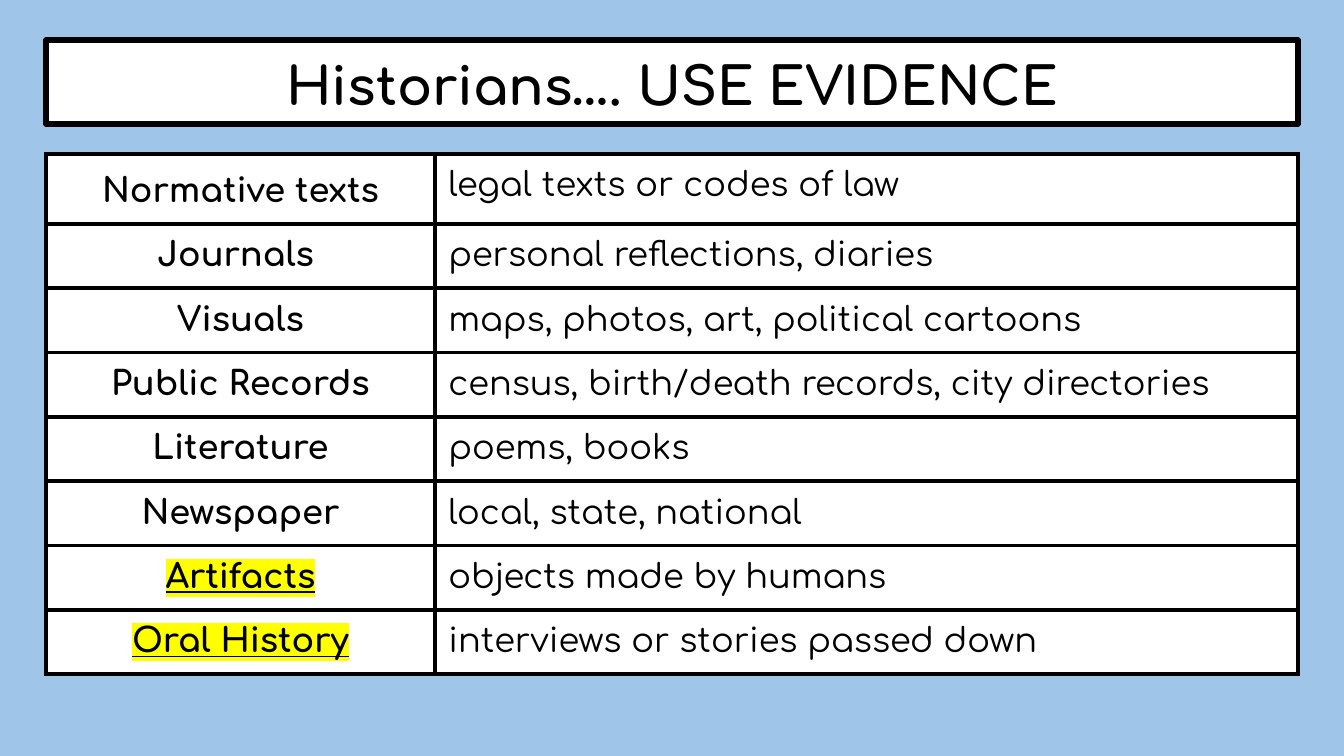
from dataclasses import dataclass

from pptx import Presentation
from pptx import util as u
from pptx.dml.color import RGBColor
from pptx.enum import text
from pptx.oxml.ns import qn
from lxml import etree


@dataclass(frozen=True)
class Theme:
    font: str = "Comfortaa"
    sky: str = "9FC5E8"
    paper: str = "FFFFFF"
    ink: str = "000000"
    marker: str = "FFFF00"
    title_size: int = 28
    body_size: int = 18
    frame_width: float = 3
    rule_width: float = 2.25


THEME = Theme()
PX = 914400 / 134.4
LEFT, WIDTH = 46, 1252
TERM_WIDTH = 389
FIRST_ROW, ROW = 69, 64
INSET = u.Inches(0.1)

EVIDENCE = [
    ("Normative texts", "legal texts or codes of law"),
    ("Journals ", "personal reflections, diaries"),
    ("Visuals", "maps, photos, art, political cartoons"),
    ("Public Records", "census, birth/death records, city directories"),
    ("Literature", "poems, books"),
    ("Newspaper", "local, state, national"),
    ("Artifacts", "objects made by humans"),
    ("Oral History", "interviews or stories passed down"),
]
HIGHLIGHTED = {"Artifacts", "Oral History"}


def px(length):
    return u.Emu(round(length * PX))


def style(paragraph, size, bold, align):
    paragraph.alignment = align
    font = paragraph.font
    font.name, font.size, font.bold = THEME.font, u.Pt(size), bold
    font.color.rgb = RGBColor.from_string(THEME.ink)


prs = Presentation()
prs.slide_width, prs.slide_height = px(1344), px(756)
slide = prs.slides.add_slide(prs.slide_layouts[5])
slide.background.fill.solid()
slide.background.fill.fore_color.rgb = RGBColor.from_string(THEME.sky)

# Title
title = slide.shapes.title
title.left, title.top, title.width, title.height = px(LEFT), px(40), px(WIDTH), px(84)
title.fill.solid()
title.fill.fore_color.rgb = RGBColor.from_string(THEME.paper)
title.line.color.rgb = RGBColor.from_string(THEME.ink)
title.line.width = u.Pt(THEME.frame_width)
heading = title.text_frame
heading.text = "Historians…. USE EVIDENCE"
heading.word_wrap = True
heading.auto_size = text.MSO_AUTO_SIZE.NONE
heading.vertical_anchor = text.MSO_ANCHOR.TOP
heading.margin_left = heading.margin_right = INSET
heading.margin_top = heading.margin_bottom = INSET
style(heading.paragraphs[0], THEME.title_size, True, text.PP_ALIGN.CENTER)

# Kinds of evidence
row_heights = [FIRST_ROW] + [ROW] * (len(EVIDENCE) - 1)
table = slide.shapes.add_table(
    len(EVIDENCE), 2, px(LEFT), px(154), px(WIDTH), px(sum(row_heights))
).table
table.first_row = table.horz_banding = False
table.columns[0].width = px(TERM_WIDTH)
table.columns[1].width = px(WIDTH - TERM_WIDTH)

for row, (entry, height) in enumerate(zip(EVIDENCE, row_heights)):
    table.rows[row].height = px(height)
    for column, wording in enumerate(entry):
        is_term = column == 0
        cell = table.cell(row, column)
        cell.text = wording
        cell.margin_left = cell.margin_right = INSET
        cell.margin_top = cell.margin_bottom = INSET
        paragraph = cell.text_frame.paragraphs[0]
        align = text.PP_ALIGN.CENTER if is_term else text.PP_ALIGN.LEFT
        style(paragraph, THEME.body_size, is_term, align)
        if is_term and row == 0:
            paragraph.line_spacing = 1.15

        if wording in HIGHLIGHTED:
            run = paragraph.runs[0]
            run.font.underline = True
            highlight = etree.SubElement(run.font._element, qn("a:highlight"))
            etree.SubElement(highlight, qn("a:srgbClr"), val=THEME.marker)

        # Borders come before the fill in the cell properties
        properties = cell._tc.get_or_add_tcPr()
        for side in ("lnL", "lnR", "lnT", "lnB"):
            border = etree.SubElement(
                properties, qn(f"a:{side}"), w=str(u.Pt(THEME.rule_width))
            )
            ink = etree.SubElement(border, qn("a:solidFill"))
            etree.SubElement(ink, qn("a:srgbClr"), val=THEME.ink)
        cell.fill.solid()
        cell.fill.fore_color.rgb = RGBColor.from_string(THEME.paper)

prs.save("out.pptx")
